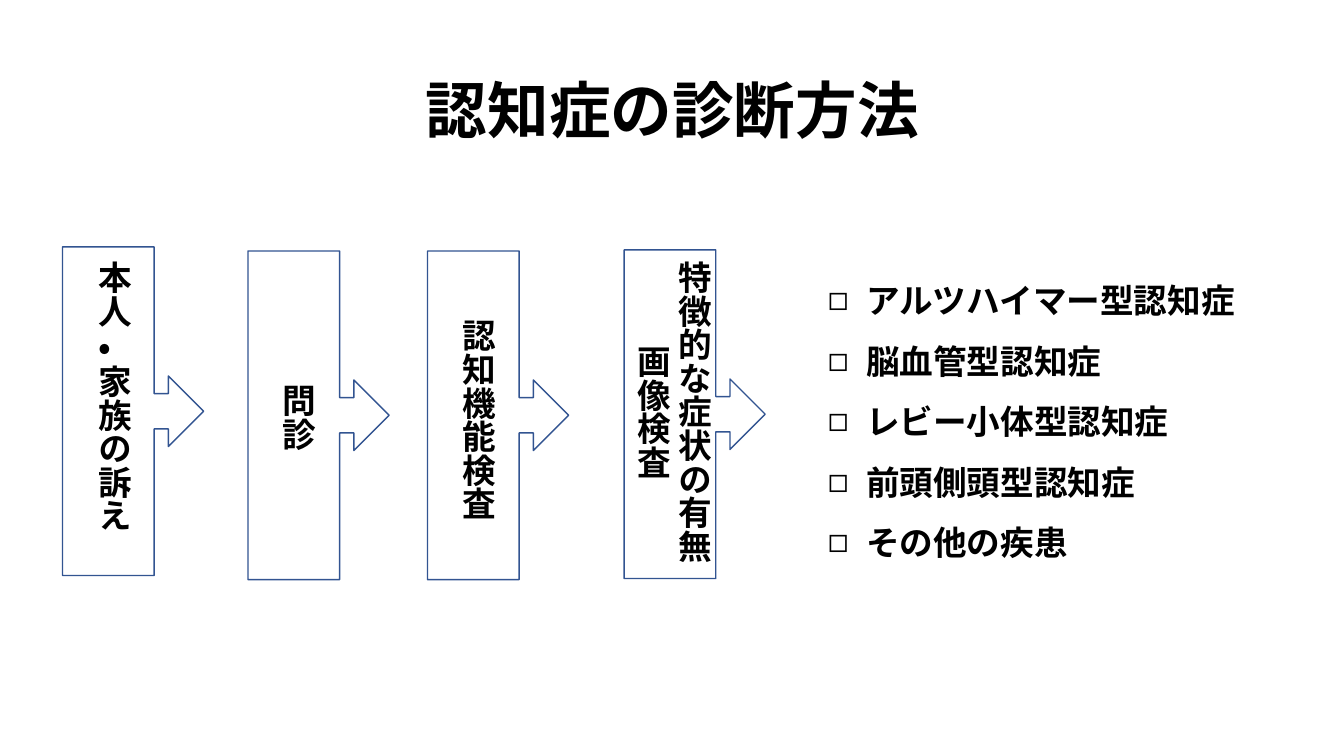
import pptx
import pptx.dml.color
import pptx.enum.lang
import pptx.enum.shapes
import pptx.enum.text
import pptx.oxml.ns
import pptx.util
from lxml import etree

Inches = pptx.util.Inches
Align = pptx.enum.text.PP_ALIGN
Anchor = pptx.enum.text.MSO_ANCHOR
COLORS = {"text": "000000", "line": "325491"}
FONT = "Cabin"
STEPS = [
    ((0.62, 2.45), (0.77, 2.49, 0.61, 3.21), ["本人・家族の訴え"], Align.CENTER),
    ((2.46, 2.49), (2.6, 3.71, 0.61, 0.91), ["問診"], Align.LEFT),
    ((4.24, 2.49), (4.38, 3.07, 0.61, 2.24), ["認知機能検査"], Align.LEFT),
    ((6.19, 2.48), (6.12, 2.49, 1.01, 3.26), ["特徴的な症状の有無", "画像検査"], Align.CENTER),
]
TYPES = ["アルツハイマー型認知症", "脳血管型認知症", "レビー小体型認知症", "前頭側頭型認知症", "その他の疾患"]


def color(name):
    return pptx.dml.color.RGBColor.from_string(COLORS[name])


def place(shape, box):
    shape.left, shape.top, shape.width, shape.height = map(Inches, box)


def write(frame, lines, size, align, space=1.0):
    frame.word_wrap = True
    frame.auto_size = pptx.enum.text.MSO_AUTO_SIZE.NONE
    for index, line in enumerate(lines):
        para = frame.add_paragraph() if index else frame.paragraphs[0]
        para.alignment = align
        para.line_spacing = space
        para.space_before = pptx.util.Pt(0)
        run = para.add_run()
        run.text = line
        font = run.font
        font.name, font.size, font.bold = FONT, pptx.util.Pt(size), True
        font.color.rgb = color("text")
        font.language_id = pptx.enum.lang.MSO_LANGUAGE_ID.JAPANESE


def add_title(slide, text):
    title = slide.shapes.title
    place(title, (0.92, 0.4, 11.5, 1.45))
    title.text_frame.vertical_anchor = Anchor.MIDDLE
    write(title.text_frame, [text], 44, Align.CENTER, 0.9)


def add_arrow(slide, spot):
    kind = pptx.enum.shapes.MSO_SHAPE.RIGHT_ARROW_CALLOUT
    arrow = slide.shapes.add_shape(kind, *map(Inches, (*spot, 1.4, 3.26)))
    arrow.shadow.inherit = False
    arrow.fill.background()
    arrow.line.color.rgb = color("line")
    arrow.line.width = pptx.util.Pt(1)


def add_label(slide, box, lines, align):
    label = slide.shapes.add_textbox(*map(Inches, box))
    write(label.text_frame, lines, 24, align)
    label.text_frame._txBody.bodyPr.set("vert", "eaVert")


def add_list(slide, items):
    body = slide.placeholders[1]
    place(body, (8.11, 2.54, 4.28, 3.08))
    frame = body.text_frame
    frame.vertical_anchor = Anchor.MIDDLE
    write(frame, items, 24, Align.LEFT, 1.5)
    for para in frame.paragraphs:
        props = para._p.get_or_add_pPr()
        props.set("marL", str(Inches(0.38)))
        props.set("indent", str(-Inches(0.38)))
        mark = etree.SubElement(props, pptx.oxml.ns.qn("a:buChar"))
        mark.set("char", "◻")


def main():
    deck = pptx.Presentation()
    deck.slide_width, deck.slide_height = Inches(13.33), Inches(7.5)
    slide = deck.slides.add_slide(deck.slide_layouts[1])
    add_title(slide, "認知症の診断方法")
    for spot, box, lines, align in STEPS:
        add_arrow(slide, spot)
        add_label(slide, box, lines, align)
    add_list(slide, TYPES)
    deck.save("out.pptx")


if __name__ == "__main__":
    main()
